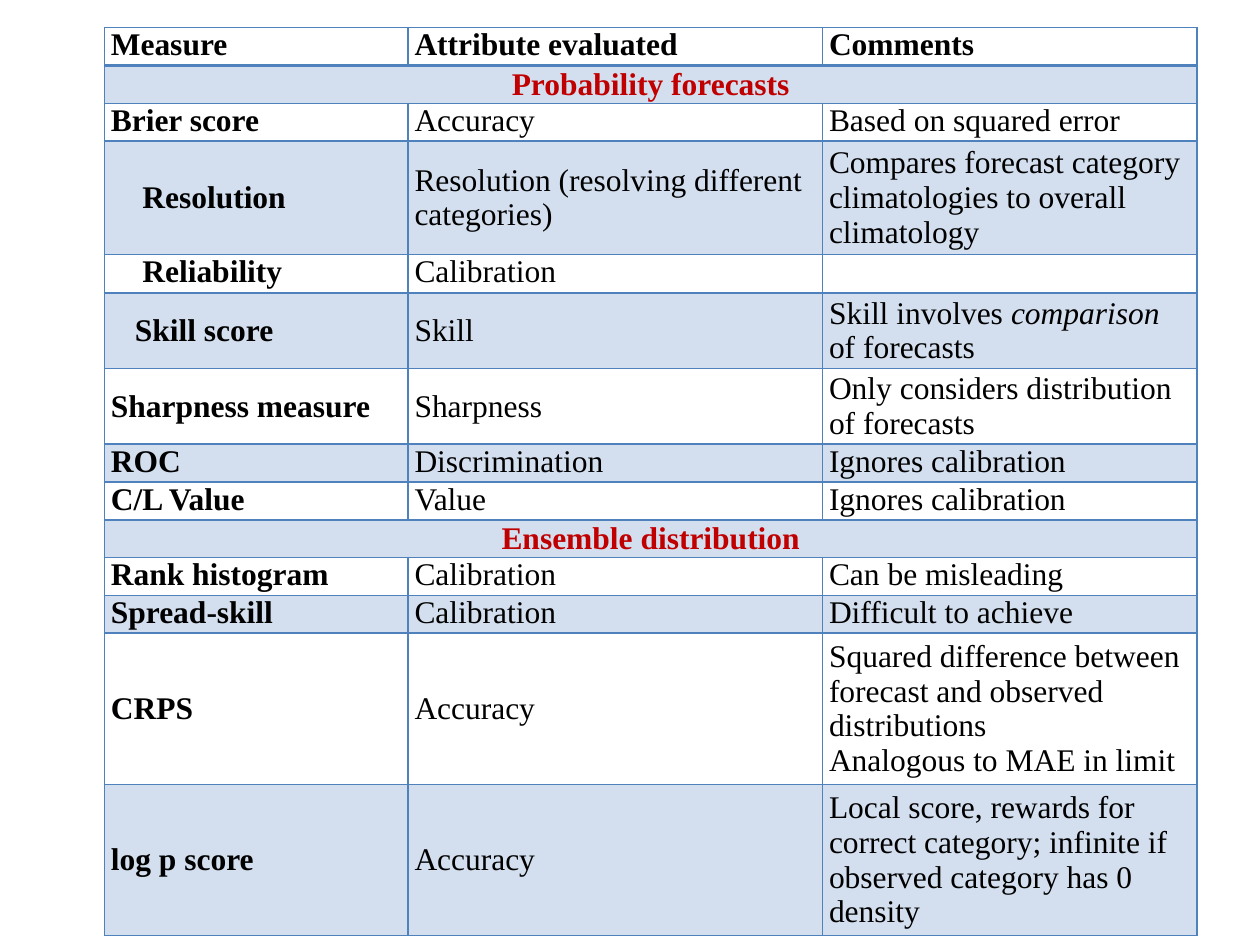
from lxml.etree import SubElement
from pptx import Presentation
from pptx.dml.color import RGBColor
from pptx.enum.text import MSO_ANCHOR as ANCHOR, PP_ALIGN as ALIGN
from pptx.oxml.ns import qn
from pptx.util import Inches, Pt

BLACK = RGBColor(0x00, 0x00, 0x00)
RED = RGBColor(0xC0, 0x00, 0x00)
BLUE = RGBColor(0x4F, 0x81, 0xBD)
BAND = RGBColor(0xD3, 0xDF, 0xEE)

LINE_HEIGHT = 0.3
COLUMN_WIDTHS = (2.41, 3.29, 2.97)
INDENTS = {"Resolution": 0.25, "Reliability": 0.25, "Skill score": 0.19}

# Each row: number of text lines, then its cells; a lone cell is a section heading.
# A cell is a string, or a list of paragraphs made of (text, italic) runs.
ROWS = [
    (1, "Measure", "Attribute evaluated", "Comments"),
    (1, "Probability forecasts"),
    (1, "Brier score", "Accuracy", "Based on squared error"),
    (3, "Resolution", "Resolution (resolving different categories)",
     "Compares forecast category climatologies to overall climatology"),
    (1, "Reliability", "Calibration", ""),
    (2, "Skill score", "Skill",
     [[("Skill involves ", False), ("comparison", True), (" of forecasts", False)]]),
    (2, "Sharpness measure", "Sharpness", "Only considers distribution of forecasts"),
    (1, "ROC", "Discrimination", "Ignores calibration"),
    (1, "C/L Value", "Value", "Ignores calibration"),
    (1, "Ensemble distribution"),
    (1, "Rank histogram", "Calibration", "Can be misleading"),
    (1, "Spread-skill", "Calibration", "Difficult to achieve"),
    (4, "CRPS", "Accuracy",
     [[("Squared difference between forecast and observed distributions", False)],
      [("Analogous to MAE in limit", False)]]),
    (4, "log p score", "Accuracy",
     "Local score, rewards for correct category; infinite if observed category has 0 density"),
]


class TableSlide:
    font, size = "Times New Roman", Pt(18)

    def __init__(self, prs):
        self.s = prs.slides.add_slide(prs.slide_layouts[6])

    def table(self, left, top, widths, rows):
        heights = [LINE_HEIGHT * lines for lines, *_ in rows]
        tbl = self.s.shapes.add_table(
            len(rows), len(widths), Inches(left), Inches(top),
            Inches(sum(widths)), Inches(sum(heights))).table
        tbl.first_row = tbl.horz_banding = False
        for column, width in zip(tbl.columns, widths):
            column.width = Inches(width)
        for i, (lines, *contents) in enumerate(rows):
            tbl.rows[i].height = Inches(heights[i])
            for cell in tbl.rows[i].cells:
                self.frame(cell, i)
            section = len(contents) == 1
            if section:
                tbl.cell(i, 0).merge(tbl.cell(i, len(widths) - 1))
            for j, content in enumerate(contents):
                cell = tbl.cell(i, j)
                if section or lines > 1:
                    cell.vertical_anchor = ANCHOR.MIDDLE
                align = (ALIGN.CENTER if section
                         else ALIGN.JUSTIFY if lines == 1 else ALIGN.LEFT)
                self.text(cell, content, align, bold=i == 0 or j == 0,
                          color=RED if section else BLACK)

    def frame(self, cell, row):
        """Set the margins, borders and banded fill of a cell."""
        cell.margin_left = cell.margin_right = Inches(0.05)
        cell.margin_top = cell.margin_bottom = 0
        for side in "LRTB":
            thick = (row, side) in ((0, "B"), (1, "T"))
            self.border(cell, side, Pt(2.25 if thick else 1))
        if row % 2:
            cell.fill.solid()
            cell.fill.fore_color.rgb = BAND
        else:
            cell.fill.background()

    def border(self, cell, side, width):
        tc_pr = cell._tc.get_or_add_tcPr()
        ln = SubElement(tc_pr, qn(f"a:ln{side}"), w=str(width))
        fill = SubElement(ln, qn("a:solidFill"))
        SubElement(fill, qn("a:srgbClr"), val=str(BLUE))

    def text(self, cell, content, align, bold, color):
        if isinstance(content, str):
            cell.margin_left += Inches(INDENTS.get(content, 0))
            content = [[(content, False)]] if content else []
        tf = cell.text_frame
        for n, runs in enumerate(content):
            p = tf.add_paragraph() if n else tf.paragraphs[0]
            p.alignment = align
            for words, italic in runs:
                r = p.add_run()
                r.text = words
                r.font.name, r.font.size = self.font, self.size
                r.font.bold, r.font.italic = bold, italic
                r.font.color.rgb = color


def main():
    prs = Presentation()
    prs.slide_width, prs.slide_height = Inches(10), Inches(7.5)
    TableSlide(prs).table(0.83, 0.22, COLUMN_WIDTHS, ROWS)
    prs.save("out.pptx")


if __name__ == "__main__":
    main()
